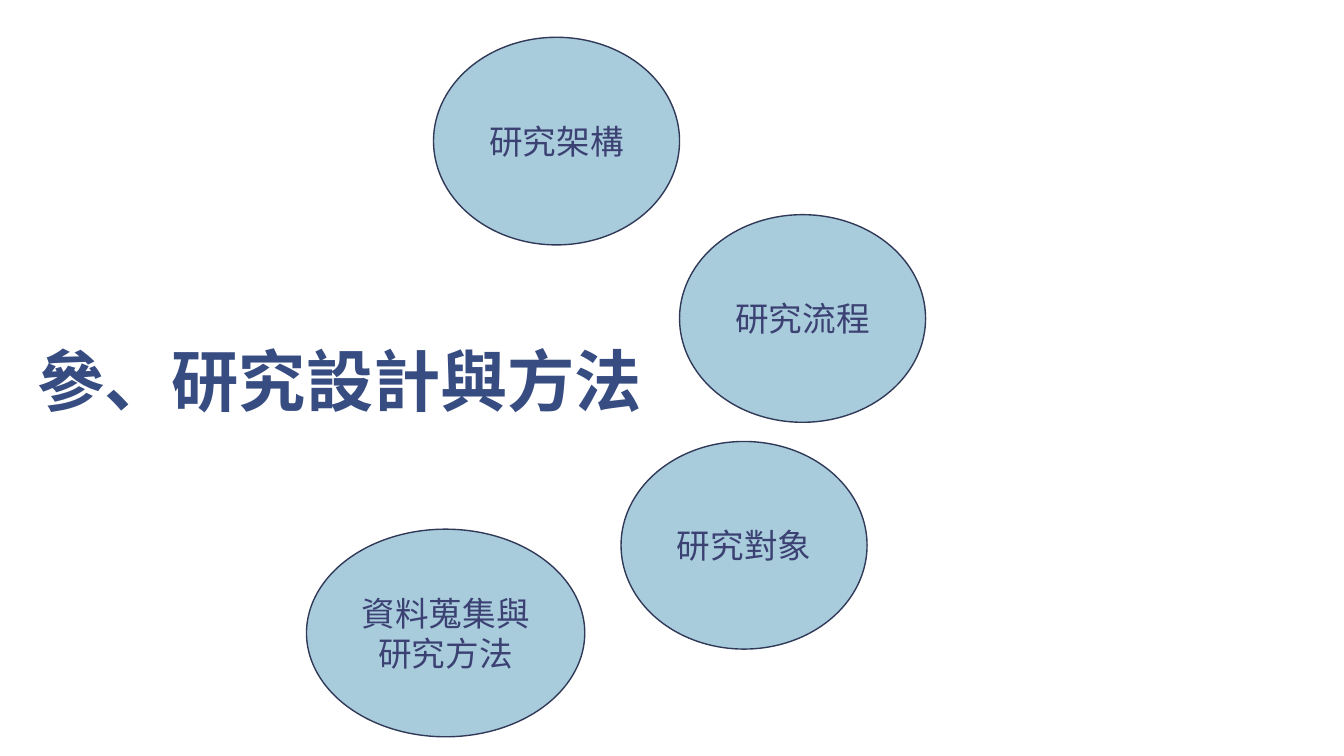
"""Build the section slide on research design and methods."""
from lxml.etree import SubElement
from pptx import Presentation
from pptx.dml.color import RGBColor
from pptx.enum.shapes import MSO_SHAPE
from pptx.enum.text import MSO_ANCHOR, MSO_AUTO_SIZE, PP_ALIGN
from pptx.oxml.ns import qn
from pptx.util import Inches, Pt

TITLE = "參、研究設計與方法"
TITLE_BOX = (0.24, 3.42, 11.11, 1.53)
TOPIC_HEIGHT = 2.06
TOPICS = [
    ("研究架構", 4.3, 0.37, 2.44),
    ("研究流程", 6.74, 2.13, 2.44),
    ("研究對象", 6.16, 4.38, 2.44),
    ("資料蒐集與研究方法", 3.04, 5.25, 2.76),
]
COLORS = {"title": "374C81", "fill": "A9CCDC", "line": "303A58", "topic": "3B4172"}
EAST_ASIAN_FONT = "Noto Sans CJK SC"
TITLE_FONT = {"name": "Times New Roman", "size": Pt(48), "bold": True}
TOPIC_FONT = {"name": EAST_ASIAN_FONT, "size": Pt(24), "bold": False}
TITLE_FRAME = {
    "margin_left": Inches(0.13), "margin_right": Inches(0.13),
    "margin_top": Inches(0.07), "margin_bottom": Inches(0.07),
    "vertical_anchor": MSO_ANCHOR.TOP, "auto_size": MSO_AUTO_SIZE.NONE, "word_wrap": True,
}
TOPIC_FRAME = {"vertical_anchor": MSO_ANCHOR.MIDDLE, "word_wrap": True}
TITLE_PARAGRAPH = {"alignment": PP_ALIGN.LEFT, "line_spacing": 0.85, "space_after": Pt(9)}
TOPIC_PARAGRAPH = {"alignment": PP_ALIGN.CENTER}


def apply(target, values):
    for name, value in values.items():
        setattr(target, name, value)


def write(shape, text, color, frame, paragraph_format, font):
    apply(shape.text_frame, frame)
    paragraph = shape.text_frame.paragraphs[0]
    apply(paragraph, paragraph_format)
    run = paragraph.add_run()
    run.text = text
    apply(run.font, font)
    run.font.color.rgb = RGBColor.from_string(COLORS[color])
    SubElement(run.font._element, qn("a:ea"), typeface=EAST_ASIAN_FONT)


def add_topic(slide, text, left, top, width):
    box = map(Inches, (left, top, width, TOPIC_HEIGHT))
    shape = slide.shapes.add_shape(MSO_SHAPE.OVAL, *box)
    shape.shadow.inherit = False
    shape.fill.solid()
    shape.fill.fore_color.rgb = RGBColor.from_string(COLORS["fill"])
    shape.line.color.rgb = RGBColor.from_string(COLORS["line"])
    shape.line.width = Pt(1)
    write(shape, text, "topic", TOPIC_FRAME, TOPIC_PARAGRAPH, TOPIC_FONT)


def main():
    presentation = Presentation()
    presentation.slide_width, presentation.slide_height = Inches(13.33), Inches(7.5)
    slide = presentation.slides.add_slide(presentation.slide_layouts[5])
    title = slide.shapes.title
    apply(title, dict(zip(("left", "top", "width", "height"), map(Inches, TITLE_BOX))))
    write(title, TITLE, "title", TITLE_FRAME, TITLE_PARAGRAPH, TITLE_FONT)
    for topic in TOPICS:
        add_topic(slide, *topic)
    presentation.save("out.pptx")


if __name__ == "__main__":
    main()
